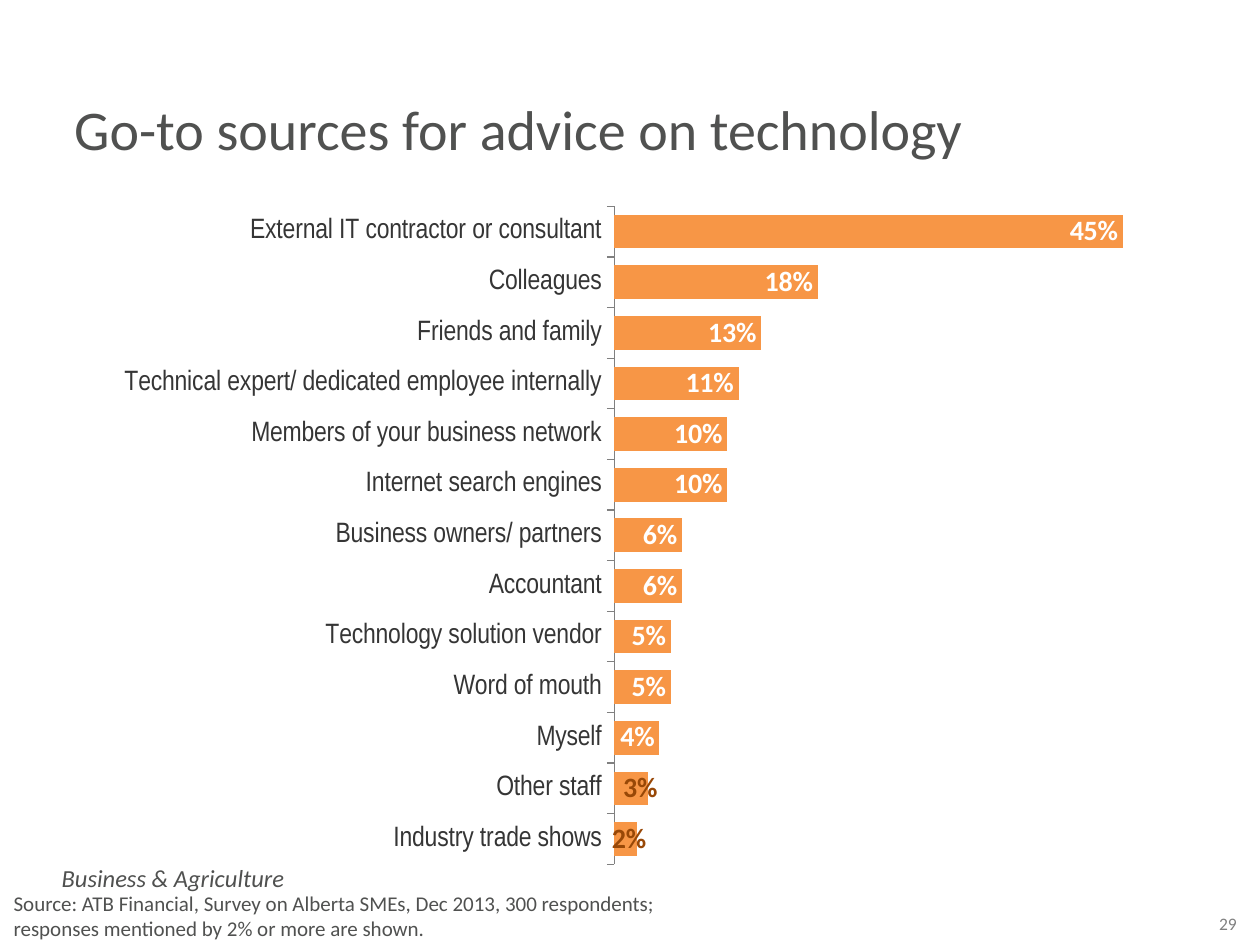
"""Build the slide on go-to sources for technology advice."""
from dataclasses import dataclass
from typing import Any

from lxml import etree
from pptx import Presentation
from pptx import util as u
from pptx.chart.data import CategoryChartData
from pptx.dml.color import RGBColor
from pptx.enum import chart as ch
from pptx.enum import text
from pptx.oxml import ns

WIDE, HIGH = u.Inches(10), u.Inches(7.5)
INK = RGBColor(0x50, 0x51, 0x50)
DARK = RGBColor(0x35, 0x35, 0x35)
GREY = RGBColor(0x80, 0x80, 0x80)
ORANGE = RGBColor(0xF7, 0x96, 0x46)
BROWN = RGBColor(0x98, 0x48, 0x07)
WHITE = RGBColor(0xFF, 0xFF, 0xFF)
FACE = "Calibri"

Area = tuple[float, float, float, float]


@dataclass(frozen=True)
class Note:
    """A line of text with its area in shares of the slide."""
    words: str
    area: Area
    size: int
    color: RGBColor = INK
    italic: bool = False
    align: Any = text.PP_ALIGN.LEFT


@dataclass(frozen=True)
class Bar:
    """A source of advice with its share in percent."""
    name: str
    share: int


NOTES = [
    Note("29", (0.95, 0.96, 0.049, 0.036), 10, GREY, align=text.PP_ALIGN.CENTER),
    Note("Business & Agriculture", (0.039, 0.907, 0.281, 0.045), 14, italic=True),
    Note("Go-to sources for advice on technology", (0.049, 0.093, 0.938, 0.085), 32),
    Note("Source: ATB Financial, Survey on Alberta SMEs, Dec 2013, 300 respondents; "
         "responses mentioned by 2% or more are shown.", (0.001, 0.936, 0.543, 0.067), 12),
]
BARS = [
    Bar("Industry trade shows", 2),
    Bar("Other staff", 3),
    Bar("Myself", 4),
    Bar("Word of mouth", 5),
    Bar("Technology solution vendor", 5),
    Bar("Accountant", 6),
    Bar("Business owners/ partners", 6),
    Bar("Internet search engines", 10),
    Bar("Members of your business network", 10),
    Bar("Technical expert/ dedicated employee internally", 11),
    Bar("Friends and family", 13),
    Bar("Colleagues", 18),
    Bar("External IT contractor or consultant", 45),
]
CHART: Area = (-0.185, 0.179, 1.121, 0.757)
PLOT = {"layoutTarget": "inner", "xMode": "edge", "yMode": "edge",
        "x": 0.6, "y": 0.052, "w": 0.4, "h": 0.92}
SHIFTS = {0: 0.01, 1: 0.01}


def place(area: Area) -> list[int]:
    """Turn shares of the slide into lengths."""
    return [round(part * side) for part, side in zip(area, (WIDE, HIGH) * 2)]


def style(item: Any, **vals: Any) -> None:
    """Set each named value on an item."""
    for key, val in vals.items():
        setattr(item, key, val)


def ink(font: Any, color: RGBColor, **vals: Any) -> None:
    """Set the colour and format of a font."""
    style(font, **vals)
    font.color.rgb = color


def write(slide: Any, note: Note) -> None:
    """Draw one note."""
    frame = slide.shapes.add_textbox(*place(note.area)).text_frame
    frame.word_wrap = True
    para = frame.paragraphs[0]
    para.alignment = note.align
    run = para.add_run()
    run.text = note.words
    ink(run.font, note.color, name=FACE, size=u.Pt(note.size), italic=note.italic)


def layout(host: Any, spot: int, vals: dict[str, Any]) -> None:
    """Give a chart part a manual layout."""
    for old in host.findall(ns.qn("c:layout")):
        host.remove(old)
    node = etree.Element(ns.qn("c:layout"))
    host.insert(spot, node)
    inner = etree.SubElement(node, ns.qn("c:manualLayout"))
    for key, val in vals.items():
        etree.SubElement(inner, ns.qn(f"c:{key}")).set("val", str(val))


def plot(slide: Any) -> None:
    """Draw the bar chart."""
    data = CategoryChartData(number_format="0%")
    data.categories = [bar.name for bar in BARS]
    data.add_series("Series 1", [bar.share / 100 for bar in BARS])
    chart = slide.shapes.add_chart(
        ch.XL_CHART_TYPE.BAR_STACKED, *place(CHART), data).chart
    style(chart, has_legend=False, has_title=False)
    ink(chart.font, DARK, name=FACE, size=u.Pt(14), bold=True)

    axis = chart.category_axis
    style(axis, major_tick_mark=ch.XL_TICK_MARK.OUTSIDE, has_major_gridlines=False)
    ink(axis.tick_labels.font, DARK, name="Arial Narrow", size=u.Pt(16), bold=False)
    axis.format.line.color.rgb = GREY
    style(chart.value_axis, visible=False, has_major_gridlines=False,
          minimum_scale=0, maximum_scale=0.5)

    bars = chart.plots[0]
    style(bars, gap_width=50, overlap=100, vary_by_categories=False)
    row = bars.series[0]
    row.format.fill.solid()
    row.format.fill.fore_color.rgb = ORANGE
    face = {"name": FACE, "size": u.Pt(16), "bold": True}
    end = ch.XL_LABEL_POSITION.INSIDE_END
    tags = row.data_labels
    style(tags, show_value=True, position=end, number_format="0%",
          number_format_is_linked=False)
    ink(tags.font, WHITE, **face)
    for spot in SHIFTS:
        tag = row.points[spot].data_label
        ink(tag.font, BROWN, **face)
        tag.position = end

    root = chart.element
    layout(root.find(f".//{ns.qn('c:plotArea')}"), 0, PLOT)
    for node, shift in zip(root.iter(ns.qn("c:dLbl")), SHIFTS.values()):
        layout(node, 1, {"x": shift, "y": 0})


def main() -> None:
    """Build and save the slide."""
    deck = Presentation()
    style(deck, slide_width=WIDE, slide_height=HIGH)
    slide = deck.slides.add_slide(deck.slide_layouts[6])
    plot(slide)
    for note in NOTES:
        write(slide, note)
    deck.save("out.pptx")


if __name__ == "__main__":
    main()
